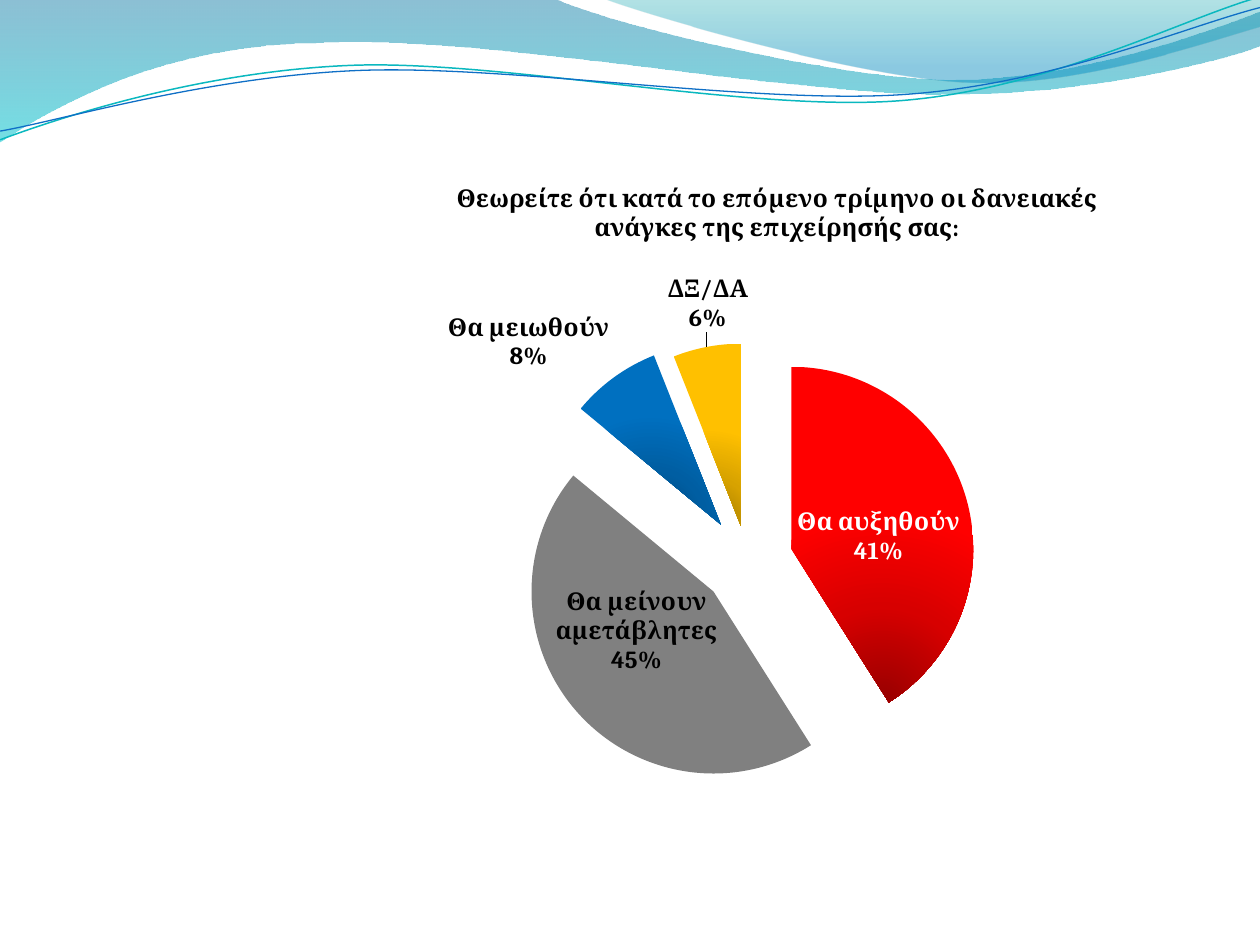
"""Build a slide with a wave header and an exploded pie chart on loan needs."""
from dataclasses import dataclass
from math import cos, radians, sin
from typing import Optional

from lxml.etree import SubElement
from pptx import Presentation
from pptx.chart.data import CategoryChartData
from pptx.dml.color import RGBColor
from pptx.enum.chart import XL_CHART_TYPE as ChartType, XL_LABEL_POSITION as LabelPos
from pptx.oxml import parse_xml
from pptx.oxml.ns import nsdecls, qn
from pptx.util import Pt

FONT = "Cambria"
TITLE = "Θεωρείτε ότι κατά το επόμενο τρίμηνο οι δανειακές ανάγκες της επιχείρησής σας:"
TILT = 357.3
PIVOT = (359.3, 42)
EXPLOSION = 25
COLORS = {
    "black": "000000", "white": "FFFFFF", "gray": "808080",
    "teal": "0AB8BF", "blue": "0F6FC6",
    "deep": "0074A1", "aqua": "00C6CF", "sea": "00A1A9", "sky": "008BBF",
    "red_dark": "970000", "red_mid": "D70000", "red": "FF0000",
    "navy_dark": "004272", "navy_mid": "005EA2", "navy": "0070C0",
    "gold_dark": "977200", "gold_mid": "D7A200", "gold": "FFC000",
}
DOWNWARD = '<a:lin ang="5400000" scaled="0"/>'
FROM_BOTTOM = '<a:path path="circle"><a:fillToRect l="50000" t="100000" r="50000"/></a:path>'


@dataclass(frozen=True)
class Stop:
    pos: int
    color: str
    alpha: int = 100


@dataclass(frozen=True)
class Wave:
    start: tuple
    segments: tuple
    stops: tuple = ()
    line: str = ""
    width: float = 0


@dataclass(frozen=True)
class Slice:
    name: str
    share: int
    colors: tuple
    pos: LabelPos
    shift: Optional[tuple] = None
    text: str = "black"
    explosion: int = EXPLOSION


WAVES = (
    Wave((0, -0.7), (
        (317, -0.7),
        (342.7, 12.2, 478, 45.4, 545.8, 45.4),
        (614.2, 45.4, 689.8, 18.7, 720, 6.5),
        (720.7, 25.9),
        (707.8, 31.7, 626.4, 54.7, 537.1, 54),
        (447.8, 54, 275, 20.2, 185, 24.5),
        (92.9, 25.2, 33.1, 59.8, -0.7, 81.4),
    ), stops=(Stop(0, "deep", 45), Stop(100, "aqua", 55))),
    Wave((344.9, -0.7), (
        (366.5, 7.9, 491, 44.6, 553.7, 46.8),
        (616.3, 49.7, 691.9, 23, 720, 15.1),
        (720, 0),
    ), stops=(Stop(0, "sea", 30), Stop(80, "sky", 45))),
    Wave((0, 79.9), (
        (34.6, 67, 113.8, 41, 199.4, 37.4),
        (284.4, 33.8, 427, 64.1, 513.4, 57.6),
        (599.8, 51.1, 675.4, 10.8, 718.6, -1.4),
    ), line="teal", width=0.85),
    Wave((0, 74.9), (
        (33.8, 69.1, 118.1, 43.9, 203.8, 40.3),
        (290.2, 36.7, 429.8, 59.8, 516.2, 54),
        (601.9, 48.2, 677.5, 15.1, 720, 4.3),
    ), line="blue", width=0.75),
)
SLICES = (
    Slice("Θα αυξηθούν", 41, ("red_dark", "red_mid", "red"), LabelPos.CENTER, (0, 0.02), "white"),
    Slice("Θα μείνουν αμετάβλητες", 45, ("gray",), LabelPos.CENTER, (-0.01, -0.03)),
    Slice("Θα μειωθούν", 8, ("navy_dark", "navy_mid", "navy"), LabelPos.OUTSIDE_END),
    Slice("ΔΞ/ΔΑ", 6, ("gold_dark", "gold_mid", "gold"), LabelPos.OUTSIDE_END, (0.05, -0.01),
          explosion=20),
)


def rgb(name: str) -> RGBColor:
    """Return the named colour."""
    return RGBColor.from_string(COLORS[name])


def set_gradient(fmt, element, stops: tuple, direction: str) -> None:
    """Give a shape or chart point a gradient fill."""
    fmt.fill.solid()
    solid = element.xpath(".//a:solidFill")[0]
    items = "".join(
        f'<a:gs pos="{s.pos * 1000}"><a:srgbClr val="{COLORS[s.color]}">'
        f'<a:alpha val="{s.alpha * 1000}"/></a:srgbClr></a:gs>' for s in stops)
    solid.getparent().replace(solid, parse_xml(
        f'<a:gradFill {nsdecls("a")} rotWithShape="1"><a:gsLst>{items}</a:gsLst>{direction}</a:gradFill>'))


def to_points(coords: tuple, turn: float) -> list:
    """Pair flat coordinates and turn them about the pivot."""
    c, s = cos(radians(turn)), sin(radians(turn))
    pairs = [(x - PIVOT[0], y - PIVOT[1]) for x, y in zip(coords[::2], coords[1::2])]
    return [(Pt(PIVOT[0] + x * c - y * s), Pt(PIVOT[1] + x * s + y * c)) for x, y in pairs]


def draw_wave(s, wave: Wave) -> None:
    """Draw a filled band or a tilted wave line with cubic curves."""
    turn = 0 if wave.stops else -TILT
    start = to_points(wave.start, turn)[0]
    segments = [to_points(seg, turn) for seg in wave.segments]
    builder = s.shapes.build_freeform(*start)
    builder.add_line_segments([seg[-1] for seg in segments], close=bool(wave.stops))
    sp = builder.convert_to_shape()
    for node, seg in zip(sp._element.xpath(".//a:lnTo"), segments):
        if len(seg) == 3:
            pts = "".join(f'<a:pt x="{x - sp.left}" y="{y - sp.top}"/>' for x, y in seg)
            node.getparent().replace(node, parse_xml(
                f'<a:cubicBezTo {nsdecls("a")}>{pts}</a:cubicBezTo>'))
    sp.shadow.inherit = False
    if wave.stops:
        set_gradient(sp, sp._element, wave.stops, DOWNWARD)
        sp.line.fill.background()
    else:
        sp.rotation = TILT
        sp.fill.background()
        sp.line.color.rgb = rgb(wave.line)
        sp.line.width = Pt(wave.width)


def layout_xml(**values):
    """Return a manual chart layout element."""
    target = '<c:layoutTarget val="inner"/>' if "w" in values else ""
    modes = "" if values.pop("offset", False) else '<c:xMode val="edge"/><c:yMode val="edge"/>'
    items = "".join(f'<c:{key} val="{value}"/>' for key, value in values.items())
    return parse_xml(f'<c:layout {nsdecls("c")}><c:manualLayout>{target}{modes}{items}'
                     "</c:manualLayout></c:layout>")


def set_font(font, color: str) -> None:
    """Set the bold chart text style."""
    font.name, font.size, font.bold = FONT, Pt(14), True
    font.color.rgb = rgb(color)


def style_slice(series, index: int, item: Slice) -> None:
    """Fill a slice and style its label."""
    ser, point = series._element, series.points[index]
    fmt = point.format
    d_pt = ser.xpath(f"c:dPt[c:idx/@val='{index}']")[0]
    if len(item.colors) == 1:
        fmt.fill.solid()
        fmt.fill.fore_color.rgb = rgb(item.colors[0])
    else:
        stops = tuple(Stop(50 * i, color) for i, color in enumerate(item.colors))
        set_gradient(fmt, d_pt, stops, FROM_BOTTOM)
    if item.explosion != EXPLOSION:
        own = SubElement(d_pt, qn("c:explosion"), val=str(item.explosion))
        d_pt.find(qn("c:spPr")).addprevious(own)
    label = point.data_label
    set_font(label.font, item.text)
    label.position = item.pos
    node = ser.xpath(f"c:dLbls/c:dLbl[c:idx/@val='{index}']")[0]
    for tag, shown in (("showVal", 0), ("showCatName", 1), ("showPercent", 1)):
        node.find(qn(f"c:{tag}")).set("val", str(shown))
    if item.shift:
        node.insert(1, layout_xml(x=item.shift[0], y=item.shift[1], offset=True))


def draw_pie(s) -> None:
    """Draw the exploded pie chart with its title."""
    data = CategoryChartData(number_format="0")
    data.categories = [item.name for item in SLICES]
    data.add_series("Series 1", [item.share for item in SLICES])
    chart = s.shapes.add_chart(ChartType.PIE, Pt(180), Pt(90), Pt(489.6), Pt(388.1), data).chart
    chart.has_legend = False
    chart.font.name, chart.font.size = FONT, Pt(10)
    chart.font.color.rgb = rgb("black")

    chart.has_title = True
    tf = chart.chart_title.text_frame
    tf.text = TITLE
    set_font(tf.paragraphs[0].font, "black")
    title = chart.chart_title._element
    area = chart._chartSpace.chart.plotArea
    for parent in (title, area):
        for old in parent.findall(qn("c:layout")):
            parent.remove(old)
    title.find(qn("c:tx")).addnext(layout_xml(x=0.16, y=0.03))
    area.insert(0, layout_xml(x=0.07, y=0.26, w=0.87, h=0.67))

    plot = chart.plots[0]
    plot.vary_by_categories = True
    series = plot.series[0]
    explosion = SubElement(series._element, qn("c:explosion"), val=str(EXPLOSION))
    series._element.find(qn("c:tx")).addnext(explosion)
    labels = series.data_labels
    labels.show_value = False
    labels.show_category_name = labels.show_percentage = True
    labels.number_format, labels.number_format_is_linked = "0%", False
    set_font(labels.font, "black")
    for index, item in enumerate(SLICES):
        style_slice(series, index, item)


def main() -> None:
    """Build and save the slide."""
    prs = Presentation()
    prs.slide_width, prs.slide_height = Pt(720), Pt(540)
    s = prs.slides.add_slide(prs.slide_layouts[6])
    for wave in WAVES:
        draw_wave(s, wave)
    draw_pie(s)
    prs.save("out.pptx")


if __name__ == "__main__":
    main()
